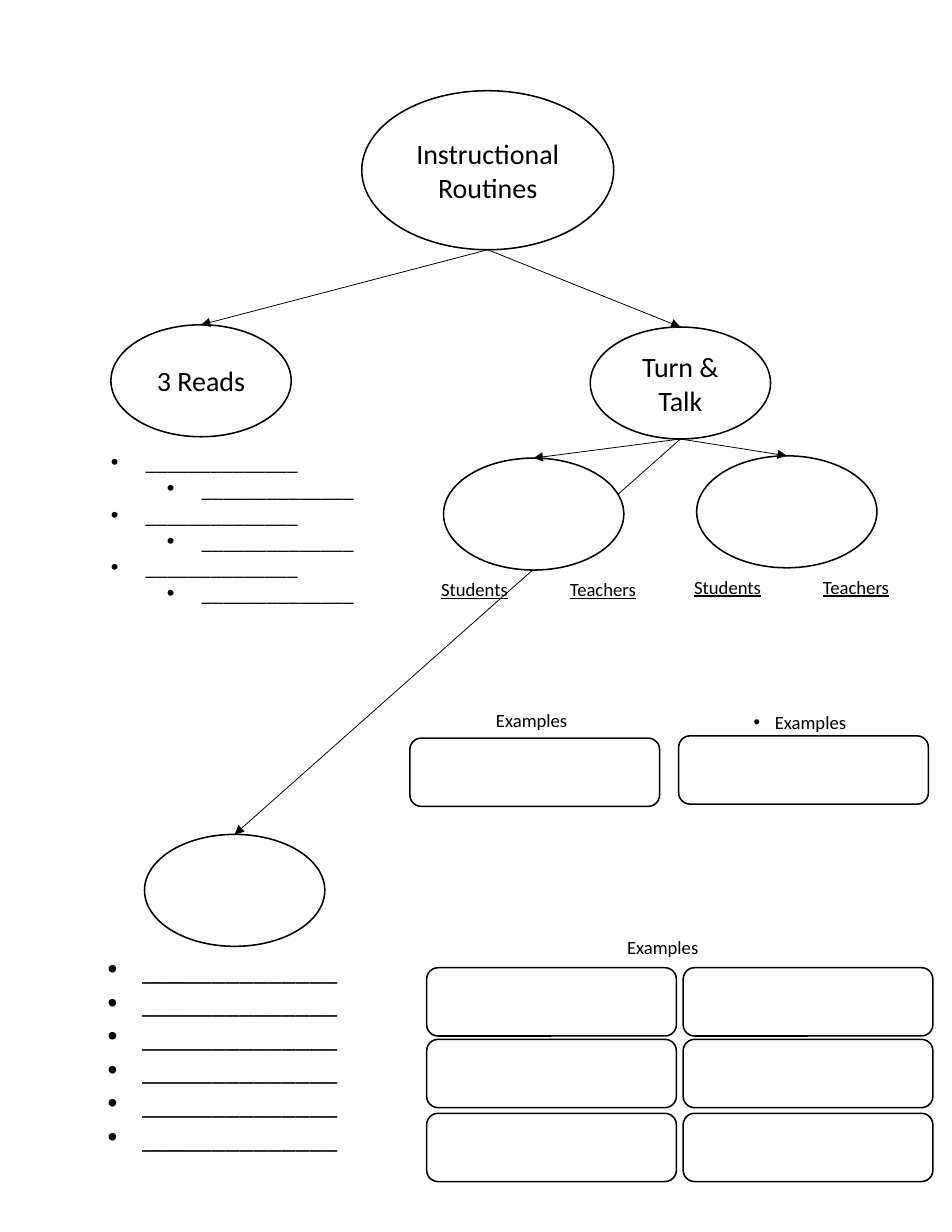
from dataclasses import dataclass
from itertools import product

from lxml.etree import SubElement
from pptx import Presentation
from pptx.dml.color import RGBColor
from pptx.enum.shapes import MSO_CONNECTOR, MSO_SHAPE
from pptx.enum.text import MSO_ANCHOR, MSO_AUTO_SIZE, PP_ALIGN
from pptx.oxml.ns import qn
from pptx.util import Inches, Pt

COLORS = {"ink": "000000", "paper": "FFFFFF"}
FONT = "Calibri"
BLANK = "_" * 14
OVAL_SIZE = (1.61, 1)
BOX_SIZE = (2.23, 0.61)


@dataclass
class Oval:
    left: float
    top: float
    text: str = ""
    width: float = OVAL_SIZE[0]
    height: float = OVAL_SIZE[1]


@dataclass
class BlankList:
    left: float
    top: float
    width: float
    height: float
    levels: list[int]
    size: int


def color(name: str) -> RGBColor:
    return RGBColor.from_string(COLORS[name])


def place(shape, left: float, top: float, width: float, height: float) -> None:
    shape.left, shape.top = Inches(left), Inches(top)
    shape.width, shape.height = Inches(width), Inches(height)


def write(paragraph, text: str, size: int = 12, align=PP_ALIGN.LEFT, level: int = 0,
          indent: float = 0, underline: bool = False, tab: float = 0) -> None:
    properties = paragraph._p.get_or_add_pPr()
    if indent:
        properties.set("marL", str(Inches(indent + level * 0.5)))
        properties.set("indent", str(Inches(-indent)))
        SubElement(properties, qn("a:buFont"), typeface="Arial")
        SubElement(properties, qn("a:buChar"), char="•")
    if tab:
        stops = SubElement(properties, qn("a:tabLst"))
        SubElement(stops, qn("a:tab"), pos=str(Inches(tab)), algn="l")
    paragraph.level = level
    paragraph.alignment = align
    paragraph.space_before = Pt(0)
    for number, part in enumerate(text.split("\t")):
        parts = ["\t", part] if number else [part]
        for piece in parts:
            span = paragraph.add_run()
            span.text = piece
            span.font.name = FONT
            span.font.size = Pt(size)
            span.font.color.rgb = color("ink")
            span.font.underline = underline and piece != "\t"


def add_outline(page, kind, left: float, top: float, width: float, height: float):
    shape = page.shapes.add_shape(
        kind, Inches(left), Inches(top), Inches(width), Inches(height))
    shape.shadow.inherit = False
    shape.fill.solid()
    shape.fill.fore_color.rgb = color("paper")
    shape.line.color.rgb = color("ink")
    shape.line.width = Pt(1)
    return shape


def add_oval(page, oval: Oval):
    shape = add_outline(page, MSO_SHAPE.OVAL, oval.left, oval.top, oval.width, oval.height)
    if oval.text:
        shape.text_frame.vertical_anchor = MSO_ANCHOR.MIDDLE
        write(shape.text_frame.paragraphs[0], oval.text, size=18, align=PP_ALIGN.CENTER)
    return shape


def add_arrow(page, parent, child) -> None:
    arrow = page.shapes.add_connector(
        MSO_CONNECTOR.STRAIGHT, parent.left + parent.width // 2,
        parent.top + parent.height, child.left, child.top)
    arrow.end_connect(child, 0)
    arrow.line.color.rgb = color("ink")
    arrow.line.width = Pt(0.5)
    SubElement(arrow.line._get_or_add_ln(), qn("a:tailEnd"), type="triangle")
    SubElement(arrow._element.spPr, qn("a:effectLst"))


def add_label(page, text: str, left: float, top: float, width: float, height: float,
              wrap: bool = False, **text_format) -> None:
    box = page.shapes.add_textbox(
        Inches(left), Inches(top), Inches(width), Inches(height))
    box.text_frame.word_wrap = wrap
    box.text_frame.auto_size = MSO_AUTO_SIZE.SHAPE_TO_FIT_TEXT
    write(box.text_frame.paragraphs[0], text, **text_format)


def fill_list(placeholder, blanks: BlankList) -> None:
    place(placeholder, blanks.left, blanks.top, blanks.width, blanks.height)
    frame = placeholder.text_frame
    frame.word_wrap = False
    frame.auto_size = MSO_AUTO_SIZE.SHAPE_TO_FIT_TEXT
    for number, level in enumerate(blanks.levels):
        paragraph = frame.add_paragraph() if number else frame.paragraphs[0]
        write(paragraph, BLANK, size=blanks.size, level=level, indent=0.31)


def main() -> None:
    deck = Presentation()
    deck.slide_width, deck.slide_height = Inches(8.5), Inches(11)
    page = deck.slides.add_slide(deck.slide_layouts[3])
    title = page.shapes.title._element
    title.getparent().remove(title)

    fill_list(page.placeholders[1], BlankList(0.89, 3.96, 2.4, 1.75, [0, 1] * 3, 14))
    fill_list(page.placeholders[2], BlankList(0.86, 8.45, 2.28, 2.22, [0] * 6, 18))

    routines = add_oval(page, Oval(3.23, 0.81, "Instructional Routines", 2.25, 1.42))
    three_reads = add_oval(page, Oval(0.99, 2.9, "3 Reads"))
    turn_and_talk = add_oval(page, Oval(5.27, 2.92, "Turn & Talk"))
    lower_branch = add_oval(page, Oval(1.29, 7.45))
    add_arrow(page, turn_and_talk, lower_branch)
    left_branch = add_oval(page, Oval(3.96, 4.09))
    right_branch = add_oval(page, Oval(6.22, 4.07))
    for parent, child in [(routines, three_reads), (routines, turn_and_talk),
                          (turn_and_talk, left_branch), (turn_and_talk, right_branch)]:
        add_arrow(page, parent, child)

    for left, top in [(3.84, 5.11), (6.1, 5.09)]:
        add_label(page, "Students\tTeachers", left, top, 2.4, 0.5,
                  wrap=True, underline=True, tab=1.15)

    add_label(page, "Examples", 4.33, 6.28, 0.85, 0.3)
    add_label(page, "Examples", 6.63, 6.3, 1.04, 0.3, indent=0.19)
    add_label(page, "Examples", 5.5, 8.31, 0.85, 0.3)

    example_grid = product((3.81, 6.1), (8.64, 9.28, 9.94))
    for left, top in [(3.66, 6.59), (6.06, 6.57), *example_grid]:
        add_outline(page, MSO_SHAPE.ROUNDED_RECTANGLE, left, top, *BOX_SIZE)

    deck.save("out.pptx")


if __name__ == "__main__":
    main()
